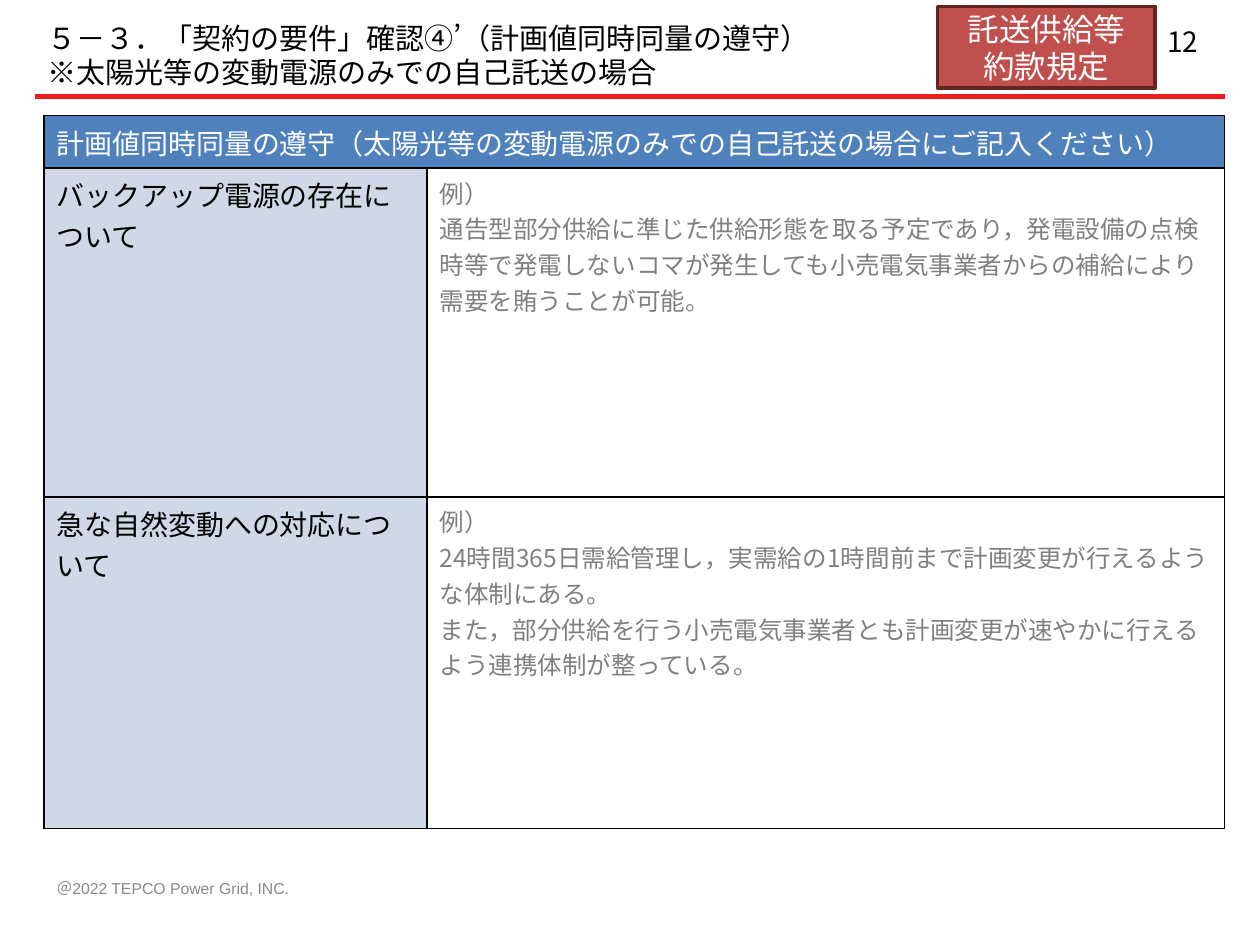
from dataclasses import dataclass

from lxml import etree
from pptx import Presentation
from pptx.dml.color import RGBColor
from pptx.enum.lang import MSO_LANGUAGE_ID
from pptx.enum.shapes import MSO_CONNECTOR, MSO_SHAPE
from pptx.enum.text import MSO_ANCHOR, PP_ALIGN
from pptx.oxml.ns import qn
from pptx.slide import Slide
from pptx.table import _Cell
from pptx.text.text import TextFrame
from pptx.util import Cm, Pt

LEFT, CENTER, RIGHT = PP_ALIGN.LEFT, PP_ALIGN.CENTER, PP_ALIGN.RIGHT
TOP, MIDDLE = MSO_ANCHOR.TOP, MSO_ANCHOR.MIDDLE
RECTANGLE = MSO_SHAPE.RECTANGLE
STRAIGHT = MSO_CONNECTOR.STRAIGHT
JAPANESE = MSO_LANGUAGE_ID.JAPANESE

BLACK = RGBColor(0x00, 0x00, 0x00)
WHITE = RGBColor(0xFF, 0xFF, 0xFF)
GRAY = RGBColor(0x80, 0x80, 0x80)
FOOTER_GRAY = RGBColor(0x89, 0x89, 0x89)
RULE_RED = RGBColor(0xEB, 0x1E, 0x1E)
BADGE_RED = RGBColor(0xC0, 0x50, 0x4D)
BADGE_EDGE = RGBColor(0x63, 0x25, 0x23)
HEADER_BLUE = RGBColor(0x4F, 0x81, 0xBD)
LABEL_BLUE = RGBColor(0xD0, 0xD8, 0xE8)

GOTHIC = "Noto Sans CJK JP"


@dataclass(frozen=True)
class Style:
    size: float
    color: RGBColor
    font: str = GOTHIC
    align: PP_ALIGN = LEFT
    line_spacing: float = 1.0


@dataclass(frozen=True)
class TextBox:
    left: float
    top: float
    width: float
    height: float
    lines: tuple[str, ...]
    style: Style
    anchor: MSO_ANCHOR = MIDDLE


@dataclass(frozen=True)
class Entry:
    label: str
    example: tuple[str, ...]
    height: float


HEADER_STYLE = Style(16, WHITE)
LABEL_STYLE = Style(16, BLACK)
EXAMPLE_STYLE = Style(14, GRAY)
BADGE_STYLE = Style(18, WHITE, align=CENTER)

TEXT_BOXES = (
    TextBox(0.89, 17.4, 9.8, 1.02, ("＠2022 TEPCO Power Grid, INC.",),
            Style(9, FOOTER_GRAY, "Arial")),
    TextBox(18.49, 0.33, 5.92, 1.02, ("12",), Style(16, BLACK, align=RIGHT)),
    TextBox(0.71, 0.33, 21.11, 1.78,
            ("５－３．「契約の要件」確認④’（計画値同時同量の遵守）",
             "※太陽光等の変動電源のみでの自己託送の場合"),
            Style(16.6, BLACK, line_spacing=0.97), TOP),
)

HEADER = "計画値同時同量の遵守（太陽光等の変動電源のみでの自己託送の場合にご記入ください）"
HEADER_HEIGHT = 1.06
COLUMN_WIDTHS = (7.72, 16.08)
ENTRIES = (
    Entry("バックアップ電源の存在について",
          ("例）",
           "通告型部分供給に準じた供給形態を取る予定であり，発電設備の点検時等で"
           "発電しないコマが発生しても小売電気事業者からの補給により需要を賄うことが可能。"),
          6.63),
    Entry("急な自然変動への対応について",
          ("例）",
           "24時間365日需給管理し，実需給の1時間前まで計画変更が行えるような体制にある。",
           "また，部分供給を行う小売電気事業者とも計画変更が速やかに行えるよう連携体制が整っている。"),
          6.68),
)


def write_lines(frame: TextFrame, lines: tuple[str, ...], style: Style) -> None:
    frame.word_wrap = True
    for index, line in enumerate(lines):
        paragraph = frame.add_paragraph() if index else frame.paragraphs[0]
        paragraph.alignment = style.align
        paragraph.line_spacing = style.line_spacing
        run = paragraph.add_run()
        run.text = line
        run.font.size = Pt(style.size)
        run.font.color.rgb = style.color
        run.font.name = style.font
        run.font.language_id = JAPANESE
        properties = run.font._element
        etree.SubElement(properties, qn("a:ea"), typeface=style.font)


def add_text_box(slide: Slide, box: TextBox) -> None:
    shape = slide.shapes.add_textbox(Cm(box.left), Cm(box.top), Cm(box.width), Cm(box.height))
    shape.text_frame.vertical_anchor = box.anchor
    write_lines(shape.text_frame, box.lines, box.style)


def add_rule(slide: Slide) -> None:
    rule = slide.shapes.add_connector(STRAIGHT, Cm(0.71), Cm(1.95), Cm(24.69), Cm(1.95))
    rule.line.color.rgb = RULE_RED
    rule.line.width = Pt(3)
    etree.SubElement(rule._element.spPr, qn("a:effectLst"))


def add_badge(slide: Slide) -> None:
    badge = slide.shapes.add_shape(RECTANGLE, Cm(18.9), Cm(0.13), Cm(4.39), Cm(1.65))
    badge.shadow.inherit = False
    badge.fill.solid()
    badge.fill.fore_color.rgb = BADGE_RED
    badge.line.color.rgb = BADGE_EDGE
    badge.line.width = Pt(2)
    badge.text_frame.vertical_anchor = MIDDLE
    write_lines(badge.text_frame, ("託送供給等", "約款規定"), BADGE_STYLE)


def format_cell(cell: _Cell, fill: RGBColor) -> None:
    cell.fill.solid()
    cell.fill.fore_color.rgb = fill
    properties = cell._tc.get_or_add_tcPr()
    for index, side in enumerate(("a:lnL", "a:lnR", "a:lnT", "a:lnB")):
        border = etree.Element(qn(side), w=str(Pt(1)))
        border_fill = etree.SubElement(border, qn("a:solidFill"))
        etree.SubElement(border_fill, qn("a:srgbClr"), val=str(BLACK))
        properties.insert(index, border)


def add_requirements_table(slide: Slide) -> None:
    heights = (HEADER_HEIGHT, *(entry.height for entry in ENTRIES))
    table = slide.shapes.add_table(
        len(heights), len(COLUMN_WIDTHS), Cm(0.89), Cm(2.33),
        Cm(sum(COLUMN_WIDTHS)), Cm(sum(heights))).table
    for column, width in zip(table.columns, COLUMN_WIDTHS):
        column.width = Cm(width)
    for row, height in zip(table.rows, heights):
        row.height = Cm(height)

    header = table.cell(0, 0)
    header.merge(table.cell(0, 1))
    write_lines(header.text_frame, (HEADER,), HEADER_STYLE)
    for cell in table.rows[0].cells:
        format_cell(cell, HEADER_BLUE)

    for row, entry in enumerate(ENTRIES, start=1):
        label, example = table.rows[row].cells
        write_lines(label.text_frame, (entry.label,), LABEL_STYLE)
        write_lines(example.text_frame, entry.example, EXAMPLE_STYLE)
        format_cell(label, LABEL_BLUE)
        format_cell(example, WHITE)


def main() -> None:
    presentation = Presentation()
    presentation.slide_width = Cm(25.4)
    presentation.slide_height = Cm(19.05)
    slide = presentation.slides.add_slide(presentation.slide_layouts[6])
    add_rule(slide)
    for box in TEXT_BOXES:
        add_text_box(slide, box)
    add_requirements_table(slide)
    add_badge(slide)
    presentation.save("out.pptx")


if __name__ == "__main__":
    main()
